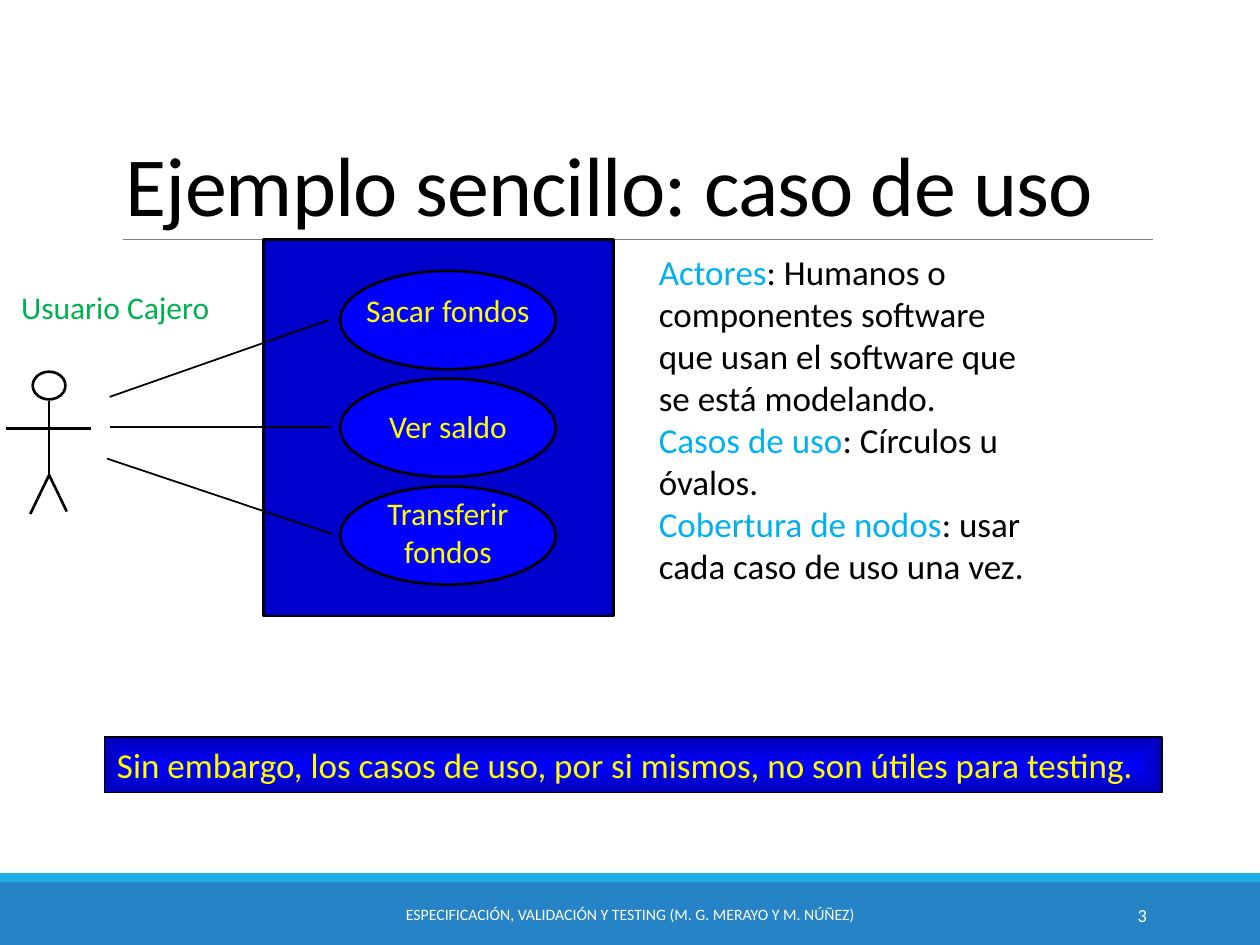
import pptx
import pptx.dml.color
import pptx.enum.shapes
import pptx.enum.text
import pptx.oxml
import pptx.oxml.ns
import pptx.util

# Grid of 100 columns by 75 rows on a 10 x 7.5 inch slide
COLS, ROWS = 100, 75
CELL = pptx.util.Inches(0.1)
FONT = "Calibri"
COLORS = {
    "footer": "2683C6", "band": "1CADE4", "rule": "808080",
    "black": "000000", "white": "FFFFFF", "yellow": "FFFF00",
    "system": "0000CC", "oval": "0000FF", "edge": "0000B6",
    "actor": "00B050", "term": "00B0F0",
}
SHAPE = pptx.enum.shapes.MSO_SHAPE
ALIGN = pptx.enum.text.PP_ALIGN
ANCHOR = pptx.enum.text.MSO_ANCHOR


def rgb(name):
    return pptx.dml.color.RGBColor.from_string(COLORS[name])


def grid(*cells):
    return [round(c * CELL) for c in cells]


def set_line(line, color, width):
    line.color.rgb = rgb(color)
    line.width = pptx.util.Pt(width)


def add_box(shapes, kind, at, fill=None, line=None, width=1.5):
    sp = shapes.add_shape(kind, *grid(*at))
    sp.shadow.inherit = False
    if fill:
        sp.fill.solid()
        sp.fill.fore_color.rgb = rgb(fill)
    else:
        sp.fill.background()
    if line:
        set_line(sp.line, line, width)
    else:
        sp.line.fill.background()
    return sp


def add_line(shapes, start, end, color="black", width=1.0):
    kind = pptx.enum.shapes.MSO_CONNECTOR.STRAIGHT
    cxn = shapes.add_connector(kind, *grid(*start, *end))
    set_line(cxn.line, color, width)
    pptx.oxml.ns.qn("a:effectLst")
    cxn._element.spPr.append(pptx.oxml.parse_xml(
        "<a:effectLst %s/>" % pptx.oxml.ns.nsdecls("a")))
    return cxn


def write(sp, paragraphs, size, align=ALIGN.LEFT, anchor=ANCHOR.TOP, wrap=True):
    """Each paragraph is a list of (text, color) runs."""
    tf = sp.text_frame
    tf.word_wrap = wrap
    tf.vertical_anchor = anchor
    for i, runs in enumerate(paragraphs):
        p = tf.add_paragraph() if i else tf.paragraphs[0]
        p.alignment = align
        for text, color in runs:
            r = p.add_run()
            r.text = text
            r.font.name = FONT
            r.font.size = pptx.util.Pt(size)
            r.font.color.rgb = rgb(color)
    return tf


def add_text(shapes, at, paragraphs, size, **layout):
    return write(shapes.add_textbox(*grid(*at)), paragraphs, size, **layout)


def fill_from_center(sp, inner, outer):
    sp.fill.gradient()
    for stop, color in zip(sp.fill.gradient_stops, (inner, outer)):
        stop.color.rgb = rgb(color)
    grad = sp._element.spPr.find(pptx.oxml.ns.qn("a:gradFill"))
    grad.remove(grad.find(pptx.oxml.ns.qn("a:lin")))
    grad.append(pptx.oxml.parse_xml(
        '<a:path %s path="shape"><a:fillToRect l="50000" t="50000" '
        'r="50000" b="50000"/></a:path>' % pptx.oxml.ns.nsdecls("a")))


def add_frame(shapes):
    # Footer bands, title rule, title, footer text and slide number
    add_box(shapes, SHAPE.RECTANGLE, (0, 70, COLS, ROWS - 70), "footer")
    add_box(shapes, SHAPE.RECTANGLE, (0, 69.3, COLS, 0.7), "band")
    add_line(shapes, (9.8, 19), (91.5, 19), "rule", 0.5)
    tf = add_text(shapes, (9, 3.1, 82.5, 15.9),
                  [[("Ejemplo sencillo: caso de uso", "black")]], 48,
                  anchor=ANCHOR.BOTTOM)
    p = tf.paragraphs[0]
    p.line_spacing = 0.85
    p.runs[0].font._element.set("spc", "-50")
    footer = "ESPECIFICACIÓN, VALIDACIÓN Y TESTING (M. G. MERAYO Y M. NÚÑEZ)"
    add_text(shapes, (30.2, 70.6, 39.6, 4), [[(footer, "white")]], 9,
             align=ALIGN.CENTER, anchor=ANCHOR.MIDDLE)
    add_text(shapes, (81.2, 70.6, 10.8, 4), [[("3", "white")]], 10.5,
             align=ALIGN.RIGHT, anchor=ANCHOR.MIDDLE)


def add_actor(shapes):
    figure = shapes.add_group_shape().shapes
    add_box(figure, SHAPE.OVAL, (2.6, 29.5, 2.6, 2.2), line="black")
    neck, hip = (3.9, 31.8), (3.9, 37.7)
    limbs = [((0.5, 34), (7.2, 34)), (neck, hip),
             (hip, (2.4, 40.8)), (hip, (5.3, 40.6))]
    for start, end in limbs:
        add_line(figure, start, end, width=1.5)


def add_use_case(shapes, row, lines, text_top, text_height):
    case = shapes.add_group_shape().shapes
    add_box(case, SHAPE.OVAL, (27, row, 17.1, 7.8), "oval", "black")
    add_text(case, (27.1, text_top, 16.9, text_height),
             [[(text, "yellow")] for text in lines], 18,
             align=ALIGN.CENTER, wrap=False)


def main():
    prs = pptx.Presentation()
    prs.slide_width, prs.slide_height = grid(COLS, ROWS)
    shapes = prs.slides.add_slide(prs.slide_layouts[6]).shapes
    add_frame(shapes)

    # System boundary, actor and use cases
    add_box(shapes, SHAPE.RECTANGLE, (20.9, 19, 27.8, 29.9), "system", "black")
    add_actor(shapes)
    cases = [(["Sacar fondos"], 22.6, 4), (["Ver saldo"], 31.8, 4),
             (["Transferir", "fondos"], 38.7, 7.1)]
    for i, case in enumerate(cases):
        add_use_case(shapes, 21.5 + 8.55 * i, *case)

    # Links from the actor to each use case
    for start, end in [((26.1, 25.4), (8.7, 31.5)),
                       ((26.2, 33.9), (8.7, 33.9)),
                       ((26.4, 42.4), (8.5, 36.4))]:
        add_line(shapes, start, end)

    # Actor label and definitions
    add_text(shapes, (-0.7, 22.4, 19.7, 4), [[("Usuario Cajero", "actor")]],
             18, align=ALIGN.CENTER)
    definitions = [
        ("Actores", ": Humanos o componentes software que usan el software "
                    "que se está modelando."),
        ("Casos de uso", ": Círculos u óvalos."),
        ("Cobertura de nodos", ": usar cada caso de uso una vez."),
    ]
    add_text(shapes, (51.3, 19.4, 32.5, 31.3),
             [[(term, "term"), (text, "black")] for term, text in definitions], 20)

    # Conclusion bar
    bar = add_box(shapes, SHAPE.RECTANGLE, (8.3, 58.5, 83.9, 4.4),
                  line="black", width=1)
    fill_from_center(bar, "oval", "edge")
    conclusion = ("Sin embargo, los casos de uso, por si mismos, "
                  "no son útiles para testing.")
    write(bar, [[(conclusion, "yellow")]], 20)
    prs.save("out.pptx")


if __name__ == "__main__":
    main()
